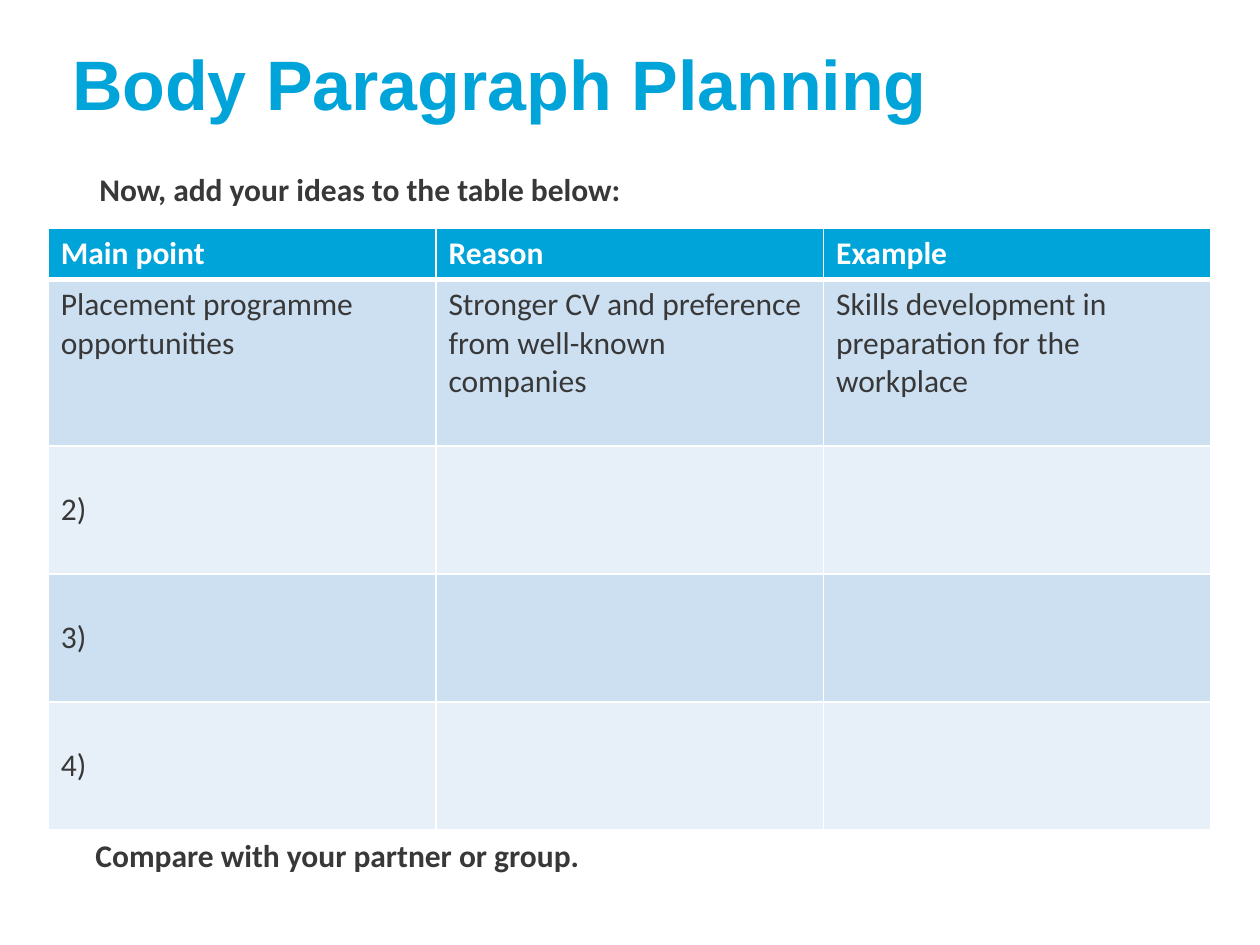
from lxml import etree
from pptx import Presentation
from pptx.dml.color import RGBColor
from pptx.enum import text
from pptx.oxml import ns
from pptx.util import Pt

BLUE, DARK, WHITE = "00A4D9", "393839", "FFFFFF"
BANDS = ["CCE0F1", "E7F0F8"]


def color(value):
    return RGBColor.from_string(value)


def write(frame, words, size=18, font="Calibri", fill=DARK, bold=False):
    para = frame.paragraphs[0]
    para.alignment = text.PP_ALIGN.LEFT
    span = para.add_run()
    span.text = words
    span.font.size = Pt(size)
    span.font.name = font
    span.font.bold = bold
    span.font.color.rgb = color(fill)


deck = Presentation()
deck.slide_width, deck.slide_height = Pt(720), Pt(540)
page = deck.slides.add_slide(deck.slide_layouts[5])

# Title
title = page.shapes.title
title.left, title.top, title.width, title.height = Pt(34), Pt(9.5), Pt(664.5), Pt(75)
title.text_frame.vertical_anchor = text.MSO_ANCHOR.MIDDLE
write(title.text_frame, "Body Paragraph Planning", size=40, font="Arial", fill=BLUE, bold=True)

# Planning table
rows = [
    ["Main point", "Reason", "Example"],
    ["Placement programme opportunities",
     "Stronger CV and preference from well-known companies",
     "Skills development in preparation for the workplace"],
    ["2)", "", ""],
    ["3)", "", ""],
    ["4)", "", ""],
]
heights = [29.2, 95.1, 73.1, 73.1, 73.1]
table = page.shapes.add_table(len(rows), 3, Pt(27.6), Pt(130.6), Pt(664.5), Pt(sum(heights))).table
for column in table.columns:
    column.width = Pt(221.5)

for r, (height, words) in enumerate(zip(heights, rows)):
    table.rows[r].height = Pt(height)
    for c, entry in enumerate(words):
        cell = table.cell(r, c)
        # White borders, thicker between header and body
        properties = cell._tc.get_or_add_tcPr()
        for side in "LRTB":
            thick = (r, side) in [(0, "B"), (1, "T")]
            line = etree.SubElement(properties, ns.qn("a:ln" + side), w=str(Pt(3 if thick else 1)))
            solid = etree.SubElement(line, ns.qn("a:solidFill"))
            etree.SubElement(solid, ns.qn("a:srgbClr"), val=WHITE)
        cell.fill.solid()
        cell.fill.fore_color.rgb = color(BANDS[(r - 1) % 2] if r else BLUE)
        if r > 1:
            cell.vertical_anchor = text.MSO_ANCHOR.MIDDLE
        if entry:
            write(cell.text_frame, entry, fill=DARK if r else WHITE, bold=r == 0)

# Instructions above and below the table
for words, left, top, width in [
    ("Now, add your ideas to the table below:", 49.7, 93.6, 319),
    ("Compare with your partner or group.", 47.5, 474, 293),
]:
    box = page.shapes.add_textbox(Pt(left), Pt(top), Pt(width), Pt(29))
    box.text_frame.word_wrap = False
    box.text_frame.auto_size = text.MSO_AUTO_SIZE.SHAPE_TO_FIT_TEXT
    write(box.text_frame, words, bold=True)

deck.save("out.pptx")
